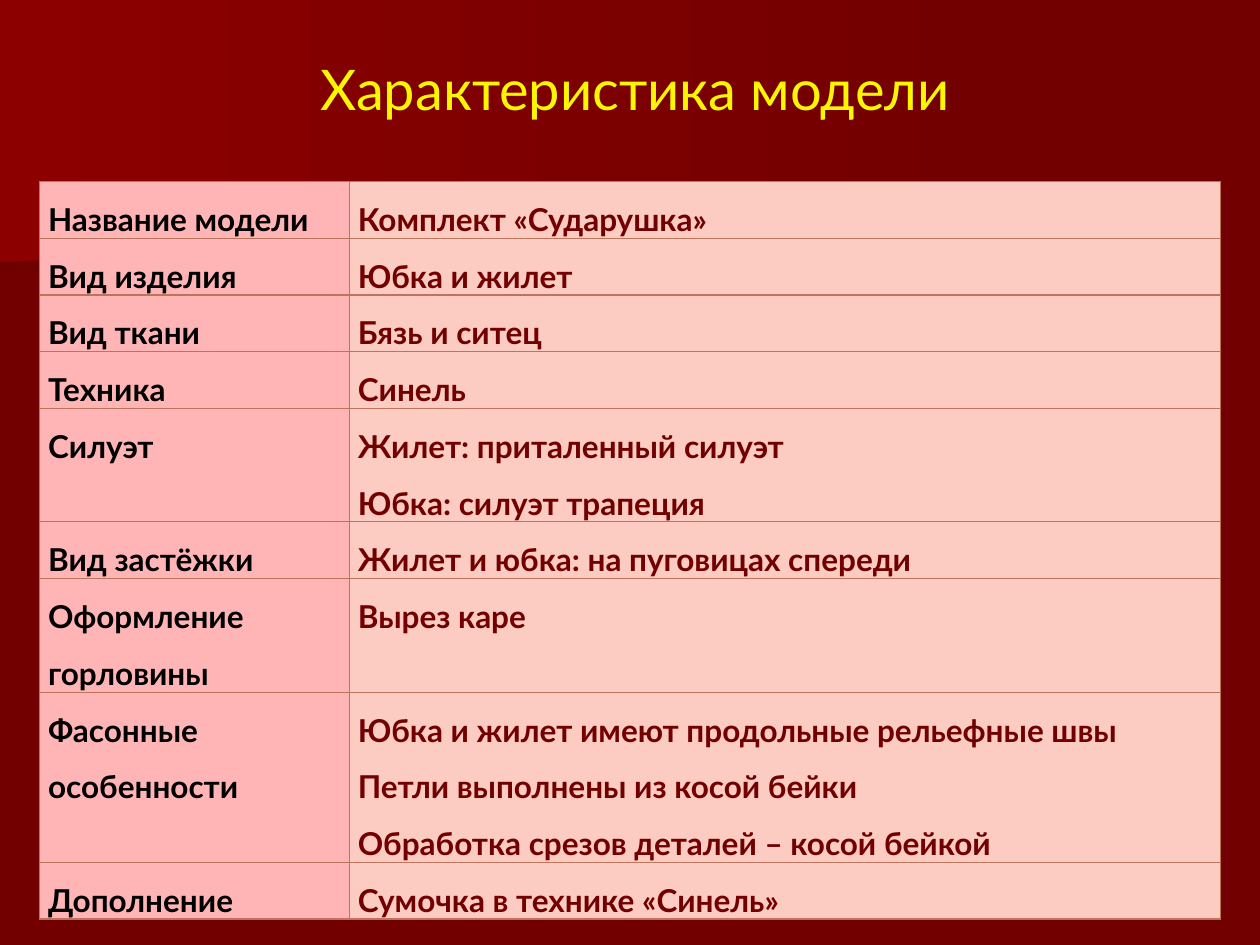
from lxml.etree import SubElement
from pptx import Presentation
from pptx.dml.color import RGBColor
from pptx.enum.text import MSO_ANCHOR, PP_ALIGN
from pptx.oxml.ns import qn
from pptx.util import Pt

FONT = "Lato"
DARK_RED = "720000"
BORDER = "BC755C"
LINE_HEIGHT = 32.4
COLUMN_WIDTHS = (177, 498)

# Label, number of text lines in the row, values
ROWS = [
    ("Название модели", 1, ["Комплект «Сударушка»"]),
    ("Вид изделия", 1, ["Юбка и жилет"]),
    ("Вид ткани", 1, ["Бязь и ситец"]),
    ("Техника", 1, ["Синель"]),
    ("Силуэт", 2, ["Жилет: приталенный силуэт", "Юбка: силуэт трапеция"]),
    ("Вид застёжки", 1, ["Жилет и юбка: на пуговицах спереди"]),
    ("Оформление горловины", 2, ["Вырез каре"]),
    ("Фасонные особенности", 3, [
        "Юбка и жилет имеют продольные рельефные швы",
        "Петли выполнены из косой бейки",
        "Обработка срезов деталей – косой бейкой",
    ]),
    ("Дополнение", 1, ["Сумочка в технике «Синель»"]),
]


def color(value):
    return RGBColor.from_string(value)


def add_run(paragraph, text, size, text_color, bold=False):
    run = paragraph.add_run()
    run.text = text
    run.font.name = FONT
    run.font.size = Pt(size)
    run.font.bold = bold
    run.font.color.rgb = color(text_color)


def add_gradient_band(slide, points, start, end):
    builder = slide.shapes.build_freeform(Pt(points[0][0]), Pt(points[0][1]))
    builder.add_line_segments([(Pt(x), Pt(y)) for x, y in points[1:]], close=True)
    shape = builder.convert_to_shape()
    shape.shadow.inherit = False
    shape.line.fill.background()
    shape.fill.gradient()
    shape.fill.gradient_angle = 0
    for stop, value in zip(shape.fill.gradient_stops, (start, end)):
        stop.color.rgb = color(value)


def add_title(slide, text):
    frame = slide.shapes.add_textbox(Pt(45), Pt(22.5), Pt(636), Pt(56)).text_frame
    frame.word_wrap = True
    frame.vertical_anchor = MSO_ANCHOR.MIDDLE
    paragraph = frame.paragraphs[0]
    paragraph.alignment = PP_ALIGN.CENTER
    add_run(paragraph, text, 32, "FCF600")


def add_borders(cell):
    properties = cell._tc.get_or_add_tcPr()
    for position, side in enumerate(("lnL", "lnR", "lnT", "lnB")):
        line = SubElement(properties, qn(f"a:{side}"), w=str(Pt(0.75)))
        properties.insert(position, line)
        fill = SubElement(line, qn("a:solidFill"))
        SubElement(fill, qn("a:srgbClr"), val=BORDER)


def fill_cell(cell, texts, text_color, background):
    cell.fill.solid()
    cell.fill.fore_color.rgb = color(background)
    cell.margin_left = cell.margin_right = Pt(5)
    cell.margin_top = cell.margin_bottom = 0
    frame = cell.text_frame
    for index, text in enumerate(texts):
        paragraph = frame.add_paragraph() if index else frame.paragraphs[0]
        paragraph.line_spacing = 1.5
        add_run(paragraph, text, 18, text_color, bold=True)
    add_borders(cell)


def add_model_table(slide):
    height = LINE_HEIGHT * sum(lines for _, lines, _ in ROWS)
    table = slide.shapes.add_table(
        len(ROWS), 2, Pt(22.5), Pt(103.7), Pt(sum(COLUMN_WIDTHS)), Pt(height)
    ).table
    table.first_row = table.horz_banding = False
    for column, width in zip(table.columns, COLUMN_WIDTHS):
        column.width = Pt(width)
    for index, (label, lines, values) in enumerate(ROWS):
        table.rows[index].height = Pt(LINE_HEIGHT * lines)
        fill_cell(table.cell(index, 0), [label], "000000", "FFB5B5")
        fill_cell(table.cell(index, 1), values, DARK_RED, "FCCBC2")


def main():
    presentation = Presentation()
    presentation.slide_width, presentation.slide_height = Pt(720), Pt(540)
    slide = presentation.slides.add_slide(presentation.slide_layouts[6])

    # Background with two slanted bands
    slide.background.fill.solid()
    slide.background.fill.fore_color.rgb = color(DARK_RED)
    add_gradient_band(
        slide, [(560, 110), (0, 156), (0, 73), (561, 73), (560, 92)], "6F0000", DARK_RED
    )
    add_gradient_band(
        slide, [(570, 117), (0, 150), (0, 0), (570, 0)], "8C0000", DARK_RED
    )

    # Content
    add_title(slide, "Характеристика модели")
    add_model_table(slide)
    presentation.save("out.pptx")


if __name__ == "__main__":
    main()
